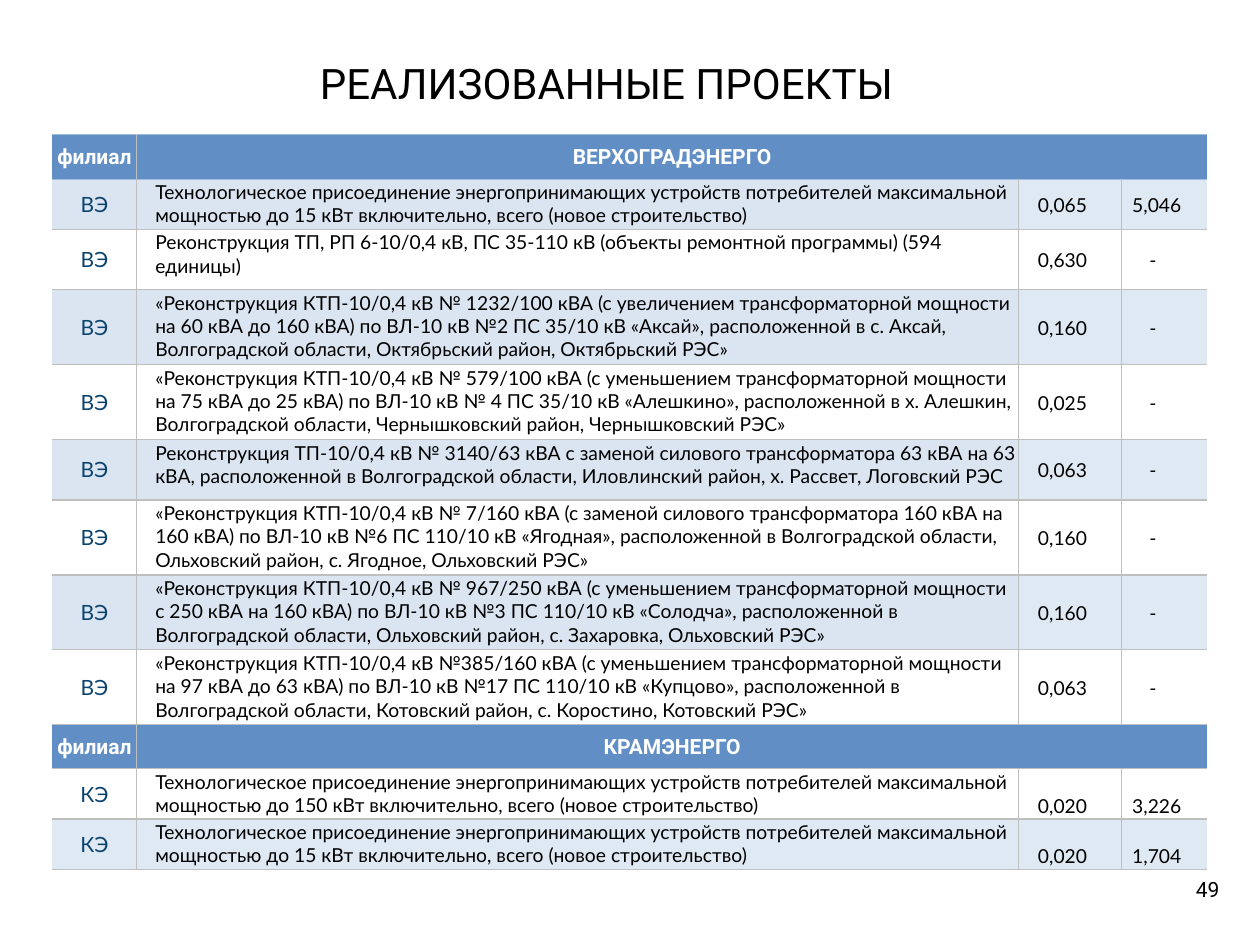
from lxml import etree
from pptx import Presentation
from pptx.dml.color import RGBColor
from pptx.enum.text import MSO_ANCHOR as Anchor, PP_ALIGN as Align
from pptx.oxml.ns import qn
from pptx.util import Cm, Pt

COLORS = {
    "black": "000000",
    "white": "FFFFFF",
    "branch": "0B436F",
    "header": "618FC5",
    "header_edge": "A0BCDC",
    "grid": "BFBFBF",
    "band": "4F81BD",
    "pale": "DFE9F3",
}
BAND_ALPHA = 20000

COLUMN_WIDTHS = [1.71, 17.78, 2.07, 1.73]
HEADER, TWO_LINES, TALL_TWO, THREE_LINES = 0.89, 1.01, 1.22, 1.51

# Cell margins in cm: left, top, right, bottom
TIGHT = (0.04, 0, 0.04, 0)
DESCRIPTION = (0.37, 0.03, 0.03, 0)
NUMBER = (0.03, 0.03, 0.34, 0)
LOW_NUMBER = (0.03, 0.5, 0.34, 0)
DASH = (0.03, 0.03, 0.5, 0)

CONNECTION = ("Технологическое присоединение энергопринимающих устройств потребителей "
              "максимальной мощностью до {} кВт включительно, всего (новое строительство)")

# Branch group: name, short name, (row height, project, capacity, length)
GROUPS = [
    ("ВЕРХОГРАДЭНЕРГО", "ВЭ", [
        (TWO_LINES, CONNECTION.format(15), "0,065", "5,046"),
        (TALL_TWO, "Реконструкция ТП, РП 6-10/0,4 кВ, ПС 35-110 кВ (объекты ремонтной "
         "программы) (594 единицы)", "0,630", "-"),
        (THREE_LINES, "«Реконструкция КТП-10/0,4 кВ № 1232/100 кВА (с увеличением "
         "трансформаторной мощности на 60 кВА до 160 кВА) по ВЛ-10 кВ №2 ПС 35/10 кВ "
         "«Аксай», расположенной в с. Аксай, Волгоградской области, Октябрьский район, "
         "Октябрьский РЭС»", "0,160", "-"),
        (THREE_LINES, "«Реконструкция КТП-10/0,4 кВ № 579/100 кВА (с уменьшением "
         "трансформаторной мощности на 75 кВА до 25 кВА) по ВЛ-10 кВ № 4 ПС 35/10 кВ "
         "«Алешкино», расположенной в х. Алешкин, Волгоградской области, Чернышковский "
         "район, Чернышковский РЭС»", "0,025", "-"),
        (TALL_TWO, "Реконструкция ТП-10/0,4 кВ № 3140/63 кВА с заменой силового "
         "трансформатора 63 кВА на 63 кВА, расположенной в Волгоградской области, "
         "Иловлинский район, х. Рассвет, Логовский РЭС", "0,063", "-"),
        (THREE_LINES, "«Реконструкция КТП-10/0,4 кВ № 7/160 кВА (с заменой силового "
         "трансформатора 160 кВА на 160 кВА) по ВЛ-10 кВ №6 ПС 110/10 кВ «Ягодная», "
         "расположенной в Волгоградской области, Ольховский район, с. Ягодное, "
         "Ольховский РЭС»", "0,160", "-"),
        (THREE_LINES, "«Реконструкция КТП-10/0,4 кВ № 967/250 кВА (с уменьшением "
         "трансформаторной мощности с 250 кВА на 160 кВА) по ВЛ-10 кВ №3 ПС 110/10 кВ "
         "«Солодча», расположенной в Волгоградской области, Ольховский район, "
         "с. Захаровка, Ольховский РЭС»", "0,160", "-"),
        (THREE_LINES, "«Реконструкция КТП-10/0,4 кВ №385/160 кВА (с уменьшением "
         "трансформаторной мощности на 97 кВА до 63 кВА) по ВЛ-10 кВ №17 ПС 110/10 кВ "
         "«Купцово», расположенной в Волгоградской области, Котовский район, "
         "с. Коростино, Котовский РЭС»", "0,063", "-"),
    ]),
    ("КРАМЭНЕРГО", "КЭ", [
        (TWO_LINES, CONNECTION.format(150), "0,020", "3,226"),
        (TWO_LINES, CONNECTION.format(15), "0,020", "1,704"),
    ]),
]


def write_text(frame, text, size=11, font="Lato", color="black", bold=False, align=Align.LEFT):
    para = frame.paragraphs[0]
    para.alignment = align
    span = para.add_run()
    span.text = text
    span.font.size = Pt(size)
    span.font.name = font
    span.font.bold = bold
    span.font.color.rgb = RGBColor.from_string(COLORS[color])


class ProjectSlide:
    def __init__(self, deck, font="Roboto"):
        self.font = font
        self.page = deck.slides.add_slide(deck.slide_layouts[6])

    def text(self, text, left, top, width, height, size, wrap=True):
        box = self.page.shapes.add_textbox(Cm(left), Cm(top), Cm(width), Cm(height))
        frame = box.text_frame
        frame.word_wrap = wrap
        frame.margin_left = frame.margin_right = Cm(0.13)
        frame.margin_top = frame.margin_bottom = Cm(0.13)
        write_text(frame, text, size=size, font=self.font)

    def table(self, left, top, widths, heights):
        shape = self.page.shapes.add_table(
            len(heights), len(widths), Cm(left), Cm(top), Cm(sum(widths)), Cm(sum(heights)))
        table = shape.table
        for column, width in zip(table.columns, widths):
            column.width = Cm(width)
        for row, height in zip(table.rows, heights):
            row.height = Cm(height)
        return table

    def border(self, cell, side, color):
        properties = cell._tc.get_or_add_tcPr()
        line = etree.SubElement(properties, qn("a:ln" + side), w=str(Pt(0.75)))
        if color is None:
            etree.SubElement(line, qn("a:noFill"))
        else:
            fill = etree.SubElement(line, qn("a:solidFill"))
            etree.SubElement(fill, qn("a:srgbClr"), val=COLORS[color])

    def cell(self, cell, text, margins, edges, fill=None, anchor=Anchor.MIDDLE, **style):
        cell.margin_left, cell.margin_top, cell.margin_right, cell.margin_bottom = map(Cm, margins)
        cell.vertical_anchor = anchor
        for side, color in zip("LRTB", edges):
            self.border(cell, side, color)
        if fill is None:
            cell.fill.background()
        else:
            cell.fill.solid()
            cell.fill.fore_color.rgb = RGBColor.from_string(COLORS[fill])
            if fill == "band":
                tint = cell._tc.tcPr.find(".//" + qn("a:solidFill") + "/" + qn("a:srgbClr"))
                tint = cell._tc.tcPr.find(qn("a:solidFill"))[0]
                etree.SubElement(tint, qn("a:alpha"), val=str(BAND_ALPHA))
        if text:
            write_text(cell.text_frame, text, **style)

    def group_header(self, table, row, name):
        edge = "header_edge" if row == 0 else "grid"
        for column, text in enumerate(["филиал", name, "", ""]):
            edges = (None if column == 0 else "grid", "grid" if column == 0 else None, edge, edge)
            self.cell(table.cell(row, column), text, TIGHT, edges, "header", size=12,
                      font=self.font, color="white", bold=True, align=Align.CENTER)
        table.cell(row, 1).merge(table.cell(row, 3))

    def project(self, table, row, branch, values, top_edge, fills, number_margins):
        project, *numbers = values
        left, middle, right = [(None if first else "grid", None if last else "grid", top_edge, "grid")
                               for first, last in [(True, False), (False, False), (False, True)]]
        self.cell(table.cell(row, 0), branch, TIGHT, left, fills[0],
                  size=12, color="branch", align=Align.CENTER)
        self.cell(table.cell(row, 1), project, DESCRIPTION, middle, fills[0], Anchor.TOP)
        for column, (number, edges) in enumerate(zip(numbers, [middle, right]), start=2):
            margins = DASH if number == "-" else number_margins
            self.cell(table.cell(row, column), number, margins, edges, fills[1],
                      align=Align.CENTER)


def main():
    deck = Presentation()
    deck.slide_width, deck.slide_height = Cm(25.4), Cm(19.05)
    slide = ProjectSlide(deck)

    # Page number and title
    slide.text("49", 23.98, 17.55, 0.74, 0.76, size=12, wrap=False)
    slide.text("РЕАЛИЗОВАННЫЕ ПРОЕКТЫ", 6.32, 1.02, 15.29, 0.97, size=24)

    # Table of projects, one header row per branch
    heights = [height for _, _, projects in GROUPS
               for height in [HEADER] + [project[0] for project in projects]]
    table = slide.table(1.05, 2.72, COLUMN_WIDTHS, heights)
    row = 0
    for group, (name, branch, projects) in enumerate(GROUPS):
        slide.group_header(table, row, name)
        row += 1
        for _, *values in projects:
            first_group = group == 0
            fills = (None, None)
            if row % 2 == 1:
                fills = ("band" if first_group else "pale", "pale")
            top_edge = "header_edge" if row == 1 else "grid"
            slide.project(table, row, branch, values, top_edge, fills,
                          NUMBER if first_group else LOW_NUMBER)
            row += 1

    deck.save("out.pptx")


if __name__ == "__main__":
    main()
